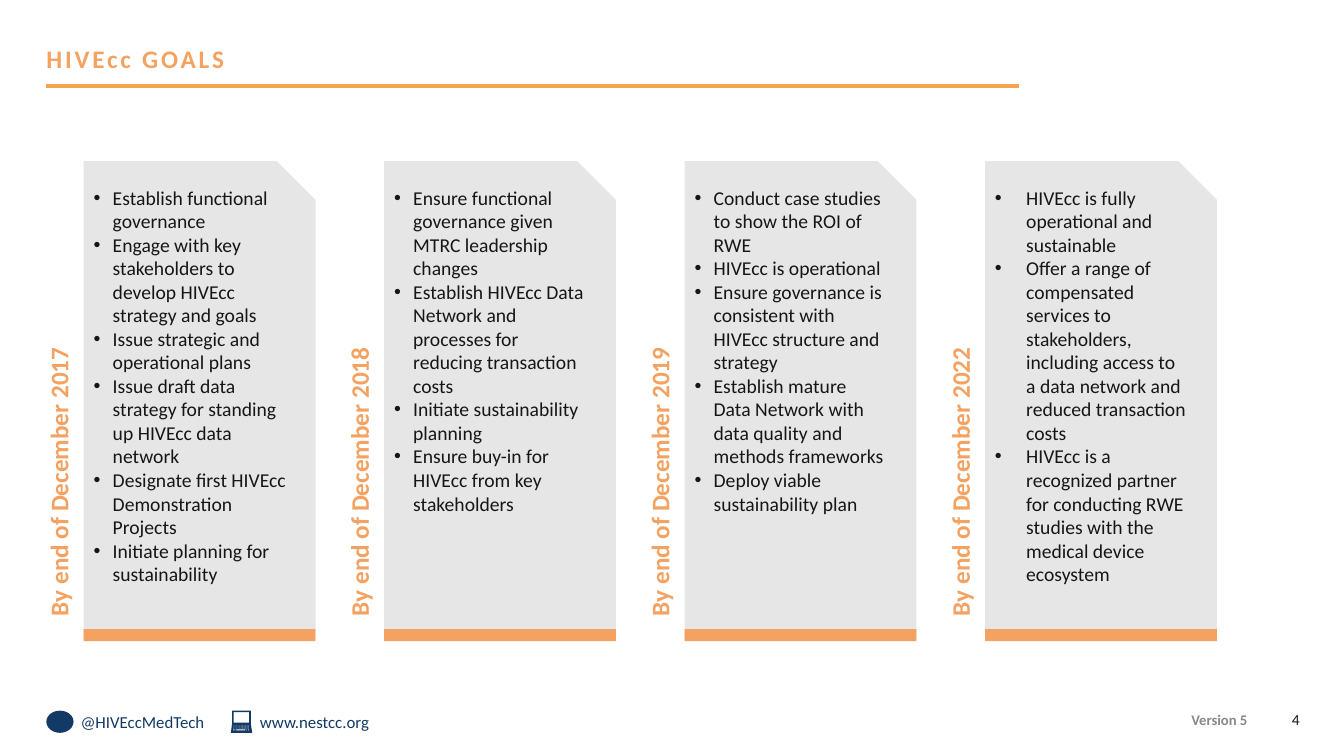
from lxml.etree import SubElement
from pptx import Presentation
from pptx.dml.color import RGBColor
from pptx.enum.shapes import MSO_CONNECTOR as Connector, MSO_SHAPE as Preset
from pptx.enum.text import MSO_ANCHOR as Anchor, PP_ALIGN as Align
from pptx.oxml.ns import qn
from pptx.util import Inches, Pt

COLORS = {
    "accent": "F4A261", "rule": "F5A34F", "card": "E7E6E6",
    "text": "171616", "muted": "8D8888", "navy": "133A64",
}

GOALS = [
    ("By end of December 2017", 0.19, [
        "Establish functional governance",
        "Engage with key stakeholders to develop HIVEcc strategy and goals",
        "Issue strategic and operational plans",
        "Issue draft data strategy for standing up HIVEcc data network",
        "Designate first HIVEcc Demonstration Projects",
        "Initiate planning for sustainability",
    ]),
    ("By end of December 2018", 0.19, [
        "Ensure functional governance given MTRC leadership changes",
        "Establish HIVEcc Data Network and processes for reducing transaction costs",
        "Initiate sustainability planning",
        "Ensure buy-in for HIVEcc from key stakeholders",
    ]),
    ("By end of December 2019", 0.19, [
        "Conduct case studies to show the ROI of RWE",
        "HIVEcc is operational",
        "Ensure governance is consistent with HIVEcc structure and strategy",
        "Establish mature Data Network with data quality and methods frameworks",
        "Deploy viable sustainability plan",
    ]),
    ("By end of December 2022", 0.31, [
        "HIVEcc is fully operational and sustainable",
        "Offer a range of compensated services to stakeholders, including access "
        "to a data network and reduced transaction costs",
        "HIVEcc is a recognized partner for conducting RWE studies with the "
        "medical device ecosystem",
    ]),
]


def color(key):
    """Return the named palette colour."""
    return RGBColor.from_string(COLORS[key])


def paint(shape, key):
    """Give a shape a flat fill without line or shadow."""
    shape.shadow.inherit = False
    shape.fill.solid()
    shape.fill.fore_color.rgb = color(key)
    shape.line.fill.background()


def add_run(paragraph, text, size, key, bold=False):
    """Add one formatted run to a paragraph."""
    run = paragraph.add_run()
    run.text = text
    run.font.name = "Calibri"
    run.font.size = Pt(size)
    run.font.bold = bold
    run.font.color.rgb = color(key)
    return run


def add_label(slide, box, text, size, key, bold=False, align=Align.LEFT):
    """Place a one-line text box and return its text frame."""
    frame = slide.shapes.add_textbox(*map(Inches, box)).text_frame
    frame.word_wrap = True
    frame.paragraphs[0].alignment = align
    add_run(frame.paragraphs[0], text, size, key, bold)
    return frame


def add_heading(slide, left, top, width):
    """Set the slide title with the rule beneath it."""
    title = slide.shapes.title
    title.left, title.top = Inches(left), Inches(top)
    title.width, title.height = Inches(width), Inches(0.36)
    frame = title.text_frame
    frame.margin_left = frame.margin_right = 0
    frame.margin_top = frame.margin_bottom = 0
    frame.vertical_anchor = Anchor.TOP
    frame.paragraphs[0].alignment = Align.LEFT
    frame.paragraphs[0].line_spacing = 0.9
    run = add_run(frame.paragraphs[0], "HIVEcc GOALS", 18, "accent", True)
    run.font._element.set("spc", "200")
    rule_y = Inches(top + 0.39)
    rule = slide.shapes.add_connector(
        Connector.STRAIGHT, Inches(left), rule_y, Inches(left + width), rule_y)
    rule.line.color.rgb = color("rule")
    rule.line.width = Pt(3)
    SubElement(rule._element.spPr, qn("a:effectLst"))


def add_goal_card(slide, left, top, width, height, deadline, indent, goals):
    """Place one card with its bulleted goals, deadline and base bar."""
    card = slide.shapes.add_shape(
        Preset.SNIP_1_RECTANGLE, *map(Inches, (left, top, width, height)))
    paint(card, "card")
    frame = card.text_frame
    frame.word_wrap = True
    frame.vertical_anchor = Anchor.TOP
    for index, goal in enumerate(goals):
        paragraph = frame.add_paragraph() if index else frame.paragraphs[0]
        paragraph.alignment = Align.LEFT
        properties = paragraph._p.get_or_add_pPr()
        properties.set("marL", str(Inches(indent)))
        properties.set("indent", str(-Inches(indent)))
        SubElement(properties, qn("a:buFont"), typeface="Arial")
        SubElement(properties, qn("a:buChar"), char="•")
        add_run(paragraph, goal, 14, "text")
    deadline_frame = add_label(
        slide, (left - 0.45, top + 0.26, 0.5, 4.35), deadline, 18, "accent", True)
    deadline_frame._txBody.bodyPr.set("vert", "vert270")
    base = slide.shapes.add_shape(
        Preset.RECTANGLE, *map(Inches, (left, top + 4.64, width, 0.12)))
    paint(base, "accent")


def rectangle(left, top, width, height):
    """Return the corners of a rectangle."""
    right, bottom = left + width, top + height
    return [(left, top), (right, top), (right, bottom), (left, bottom)]


def add_laptop(slide, left, top):
    """Draw the laptop icon, in thousandths of an inch, with screen and keys cut out."""
    body = [(12, 0), (198, 0), (198, 130), (212, 220), (0, 220), (12, 130)]
    screen = rectangle(28, 14, 154, 106)
    keys = [rectangle(22 + 15 * column, y, 9, 9)
            for y in (148, 168) for column in range(11)]
    side_keys = [rectangle(x, 187, 9, 9) for x in (20, 35, 153, 172)]
    space_bar = rectangle(52, 187, 92, 9)
    builder = slide.shapes.build_freeform(*body[0], scale=914.4)
    builder.add_line_segments(body[1:], close=True)
    for outline in [screen, *keys, *side_keys, space_bar]:
        builder.move_to(*outline[0])
        builder.add_line_segments(outline[1:], close=True)
    paint(builder.convert_to_shape(Inches(left), Inches(top)), "navy")


def add_footer(slide, left, top):
    """Place the contact details, version and page number."""
    social_mark = slide.shapes.add_shape(
        Preset.OVAL, *map(Inches, (left, top + 0.04, 0.27, 0.22)))
    paint(social_mark, "navy")
    add_label(slide, (left + 0.24, top, 1.52, 0.3), "@HIVEccMedTech", 12, "navy")
    add_laptop(slide, left + 1.83, top + 0.04)
    add_label(slide, (left + 2.02, top, 1.3, 0.3), "www.nestcc.org", 12, "navy")
    add_label(slide, (left + 9.53, top - 0.01, 2.48, 0.29), "Version 5", 10.5,
              "muted", True, Align.RIGHT)
    page = add_label(slide, (left + 11.73, top + 0.03, 0.7, 0.19), "4", 11,
                     "text", align=Align.RIGHT)
    page.margin_left = page.margin_right = page.margin_top = page.margin_bottom = 0


def main():
    """Build the goals slide and save it."""
    deck = Presentation()
    deck.slide_width, deck.slide_height = Inches(13.33), Inches(7.5)
    slide = deck.slides.add_slide(deck.slide_layouts[5])
    add_footer(slide, 0.46, 7.01)
    add_heading(slide, 0.46, 0.46, 9.65)
    for index, (deadline, indent, goals) in enumerate(GOALS):
        add_goal_card(slide, 0.83 + 2.98 * index, 1.6, 2.3, 4.74,
                      deadline, indent, goals)
    deck.save("out.pptx")


if __name__ == "__main__":
    main()
